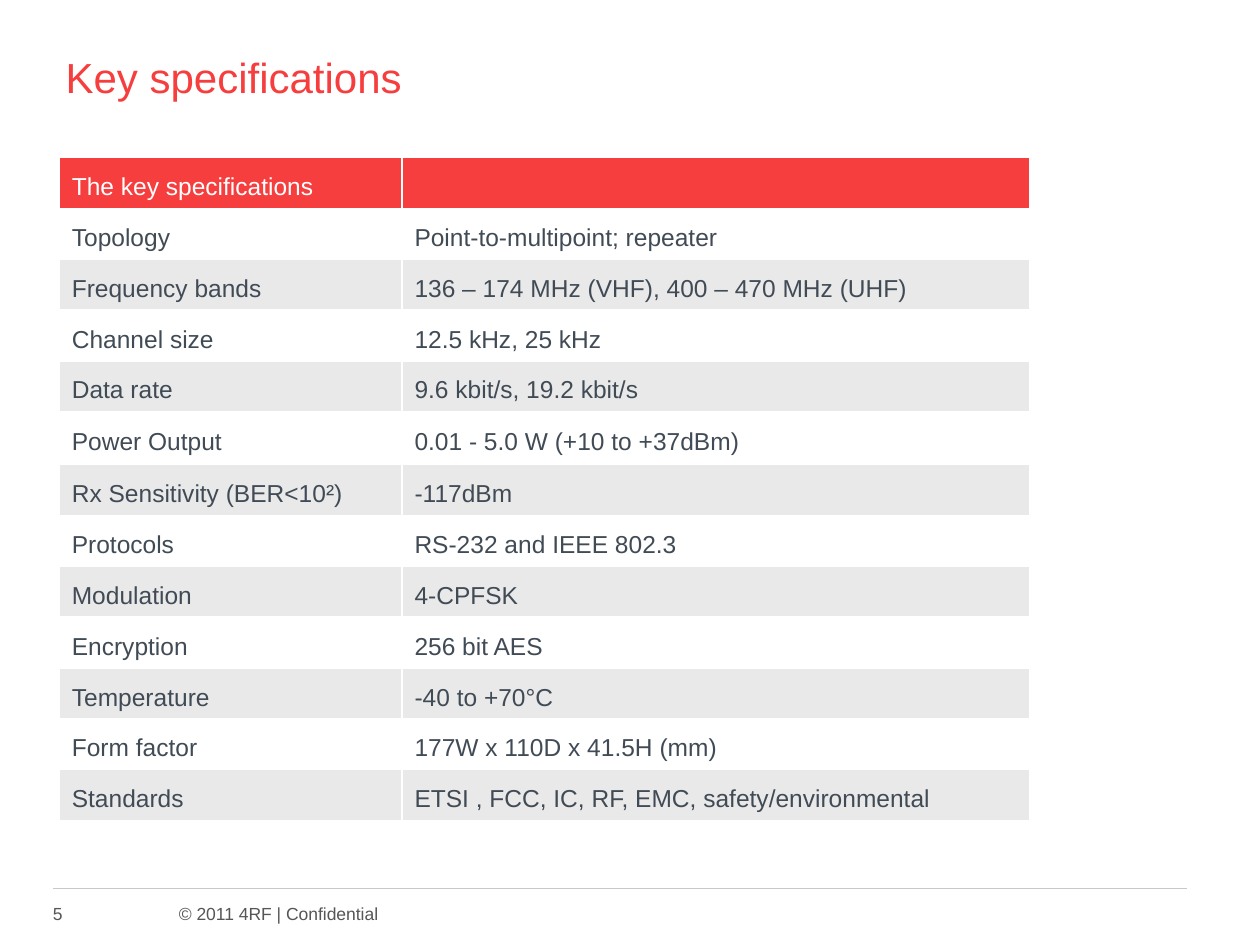
import pptx
import pptx.dml.color
import pptx.enum.shapes
import pptx.enum.text
import pptx.oxml.ns
import pptx.util
from lxml import etree

Inches = pptx.util.Inches
COLORS = {"red": "F63E3E", "white": "FFFFFF", "text": "414B56",
          "band": "E9E9E9", "footer": "565656", "rule": "C8C8C8"}

TITLE = "Key specifications"
FOOTER = "5\t© 2011 4RF | Confidential"
SPECIFICATIONS = [
    ("The key specifications", ""),
    ("Topology", "Point-to-multipoint; repeater"),
    ("Frequency bands", "136 – 174 MHz (VHF), 400 – 470 MHz (UHF)"),
    ("Channel size", "12.5 kHz, 25 kHz"),
    ("Data rate", "9.6 kbit/s, 19.2 kbit/s"),
    ("Power Output", "0.01 - 5.0 W (+10 to +37dBm)"),
    ("Rx Sensitivity (BER<10²)", "-117dBm"),
    ("Protocols", "RS-232 and IEEE 802.3"),
    ("Modulation", "4-CPFSK"),
    ("Encryption", "256 bit AES"),
    ("Temperature", "-40 to +70°C"),
    ("Form factor", "177W x 110D x 41.5H (mm)"),
    ("Standards", "ETSI , FCC, IC, RF, EMC, safety/environmental"),
]
COLUMN_WIDTHS = (2.72, 4.98)
ROW_HEIGHT = 0.38
TALL_ROWS = {"Power Output": 0.42}
LEFT = 0.42
CONTENT_WIDTH = 9


def rgb(name):
    return pptx.dml.color.RGBColor.from_string(COLORS[name])


def write(para, text, size, color):
    span = para.add_run()
    span.text = text
    formats = {"name": "Arial", "size": pptx.util.Pt(size), "bold": False}
    for attribute, value in formats.items():
        setattr(span.font, attribute, value)
    span.font.color.rgb = rgb(color)


def add_title(page):
    title = page.shapes.title
    places = {"left": LEFT, "top": 0.39, "width": CONTENT_WIDTH, "height": 0.44}
    for attribute, value in places.items():
        setattr(title, attribute, Inches(value))
    title.text_frame.vertical_anchor = pptx.enum.text.MSO_ANCHOR.MIDDLE
    para = title.text_frame.paragraphs[0]
    para.alignment = pptx.enum.text.PP_ALIGN.LEFT
    write(para, TITLE, 24, "red")


def add_specifications(page):
    heights = [TALL_ROWS.get(label, ROW_HEIGHT) for label, _ in SPECIFICATIONS]
    table = page.shapes.add_table(
        len(SPECIFICATIONS), len(COLUMN_WIDTHS), Inches(0.47), Inches(1.25),
        Inches(sum(COLUMN_WIDTHS)), Inches(sum(heights))).table
    table.first_row = table.horz_banding = False
    for column, width in zip(table.columns, COLUMN_WIDTHS):
        column.width = Inches(width)
    for index, (row, texts) in enumerate(zip(table.rows, SPECIFICATIONS)):
        row.height = Inches(heights[index])
        fill = "red" if index == 0 else "band" if index % 2 == 0 else None
        for cell, text in zip(row.cells, texts):
            if fill:
                cell.fill.solid()
                cell.fill.fore_color.rgb = rgb(fill)
            else:
                cell.fill.background()
            cell.vertical_anchor = pptx.enum.text.MSO_ANCHOR.MIDDLE
            para = cell.text_frame.paragraphs[0]
            para.line_spacing = 1.3
            write(para, text, 14, "white" if index == 0 else "text")


def add_footer(page):
    rule = page.shapes.add_connector(
        pptx.enum.shapes.MSO_CONNECTOR.STRAIGHT, Inches(LEFT), Inches(7.05),
        Inches(LEFT + CONTENT_WIDTH), Inches(7.05))
    rule.line.color.rgb = rgb("rule")
    rule.line.width = pptx.util.Pt(0.75)
    qn = pptx.oxml.ns.qn
    etree.SubElement(rule._element.spPr, qn("a:effectLst"))

    box = page.shapes.add_textbox(Inches(LEFT), Inches(7.17), Inches(4.86), Inches(0.18))
    frame = box.text_frame
    frame.word_wrap = True
    for side in ("left", "top", "right", "bottom"):
        setattr(frame, f"margin_{side}", 0)
    para = frame.paragraphs[0]
    tabs = etree.SubElement(para._p.get_or_add_pPr(), qn("a:tabLst"))
    etree.SubElement(tabs, qn("a:tab"), pos=str(Inches(1)), algn="l")
    write(para, FOOTER, 10, "footer")


def main():
    deck = pptx.Presentation()
    deck.slide_width, deck.slide_height = Inches(10), Inches(7.5)
    page = deck.slides.add_slide(deck.slide_layouts.get_by_name("Title Only"))
    add_footer(page)
    add_title(page)
    add_specifications(page)
    deck.save("out.pptx")


if __name__ == "__main__":
    main()
